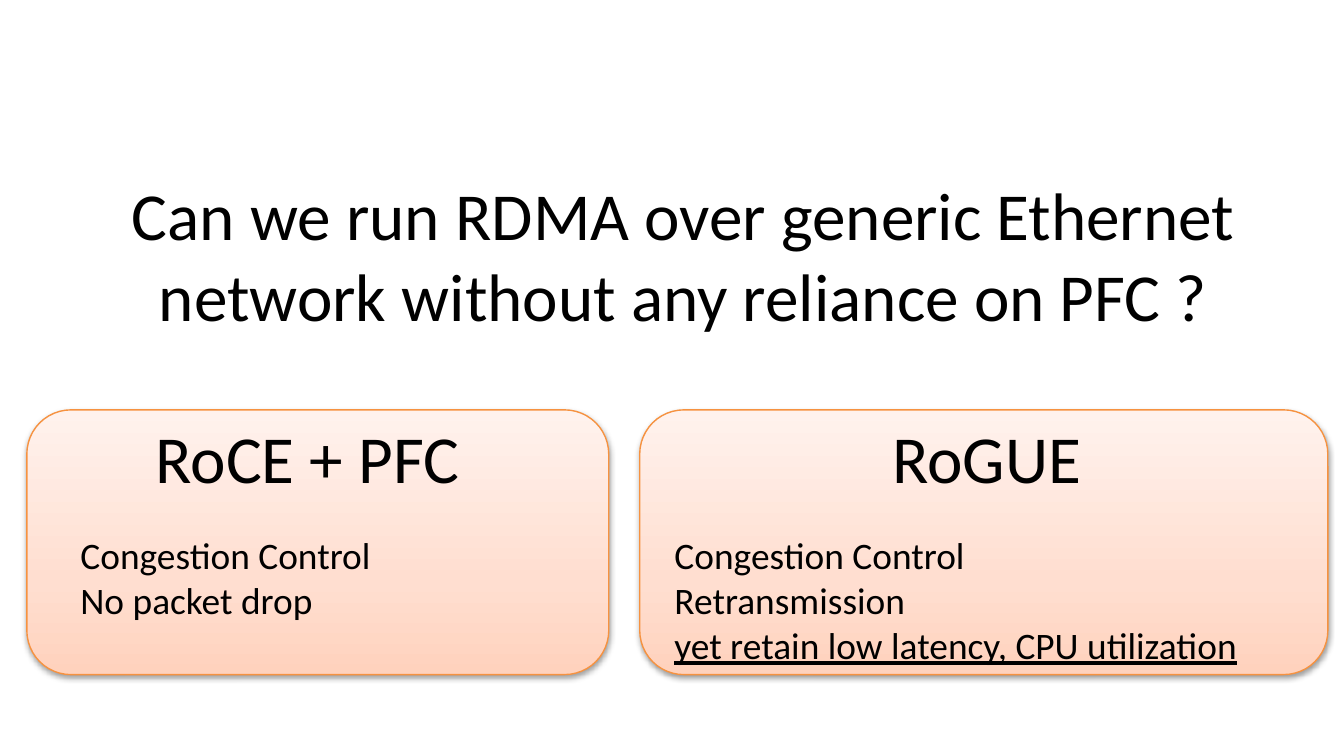
from dataclasses import dataclass

from lxml import etree
from pptx import Presentation
from pptx.dml.color import RGBColor
from pptx.enum import shapes, text
from pptx.oxml import ns
from pptx.util import Inches, Pt


@dataclass(frozen=True)
class Theme:
    font: str = "Calibri"
    ink: str = "000000"
    outline: str = "F69240"
    gradient: tuple[tuple[int, str], ...] = ((0, "FFD2BD"), (35, "FFDED0"), (100, "FFF2ED"))
    heading: int = 36
    body: int = 20


@dataclass(frozen=True)
class Box:
    left: float
    top: float
    width: float
    height: float

    def emu(self) -> tuple[int, ...]:
        return tuple(Inches(n) for n in (self.left, self.top, self.width, self.height))


@dataclass(frozen=True)
class Line:
    words: str
    underline: bool = False


@dataclass(frozen=True)
class Panel:
    frame: Box
    title: str
    title_box: Box
    points: tuple[Line, ...]
    points_box: Box


THEME = Theme()
PANEL_TOP, PANEL_HEIGHT, POINTS_TOP = 3.05, 1.97, 3.91

PANELS = (
    Panel(
        Box(0.2, PANEL_TOP, 4.33, PANEL_HEIGHT),
        "RoCE + PFC", Box(1.06, PANEL_TOP, 2.99, 0.71),
        (Line("Congestion Control"), Line("No packet drop")),
        Box(0.5, POINTS_TOP, 3.4, 0.77),
    ),
    Panel(
        Box(4.76, PANEL_TOP, 5.12, PANEL_HEIGHT),
        "RoGUE", Box(6.54, PANEL_TOP, 1.85, 0.71),
        (Line("Congestion Control"), Line("Retransmission"),
         Line("yet retain low latency, CPU utilization", underline=True)),
        Box(4.92, POINTS_TOP, 4.96, 1.11),
    ),
)


def add_color(parent, value: str):
    return etree.SubElement(parent, ns.qn("a:srgbClr"), val=value)


def add_card(s, box: Box) -> None:
    sp = s.shapes.add_shape(shapes.MSO_SHAPE.ROUNDED_RECTANGLE, *box.emu())
    sp.line.color.rgb = RGBColor.from_string(THEME.outline)
    sp.line.width = Pt(0.75)

    # Three-stop gradient, darkest at the bottom
    sp.fill.gradient()
    sp.fill.gradient_angle = 90
    stops = sp._element.spPr.find(".//" + ns.qn("a:gsLst"))
    for stop in list(stops):
        stops.remove(stop)
    for position, color in THEME.gradient:
        add_color(etree.SubElement(stops, ns.qn("a:gs"), pos=str(position * 1000)), color)

    # Soft shadow straight down
    sp.shadow.inherit = False
    effects = sp._element.spPr.find(ns.qn("a:effectLst"))
    shadow = etree.SubElement(
        effects, ns.qn("a:outerShdw"), blurRad=str(Pt(3.1)), dist=str(Pt(1.6)),
        dir="5400000", rotWithShape="0")
    etree.SubElement(add_color(shadow, THEME.ink), ns.qn("a:alpha"), val="38000")


def add_text(s, box: Box, lines: tuple[Line, ...], size: int,
             align: text.PP_ALIGN = text.PP_ALIGN.LEFT) -> None:
    tf = s.shapes.add_textbox(*box.emu()).text_frame
    tf.word_wrap = True
    tf.auto_size = text.MSO_AUTO_SIZE.SHAPE_TO_FIT_TEXT
    for i, line in enumerate(lines):
        p = tf.add_paragraph() if i else tf.paragraphs[0]
        p.alignment = align
        r = p.add_run()
        r.text = line.words
        r.font.name = THEME.font
        r.font.size = Pt(size)
        r.font.color.rgb = RGBColor.from_string(THEME.ink)
        if line.underline:
            r.font.underline = True


def main() -> None:
    # Widescreen 16:9 page
    prs = Presentation()
    prs.slide_width = Inches(10)
    prs.slide_height = prs.slide_width * 9 // 16
    s = prs.slides.add_slide(prs.slide_layouts[6])

    # Central question
    question = Line("Can we run RDMA over generic Ethernet network without any reliance on PFC ?")
    add_text(s, Box(0.28, 1.24, 9.61, 1.31), (question,), THEME.heading, text.PP_ALIGN.CENTER)

    # Two approaches side by side
    for panel in PANELS:
        add_card(s, panel.frame)
        add_text(s, panel.title_box, (Line(panel.title),), THEME.heading)
        add_text(s, panel.points_box, panel.points, THEME.body)

    prs.save("out.pptx")


if __name__ == "__main__":
    main()
